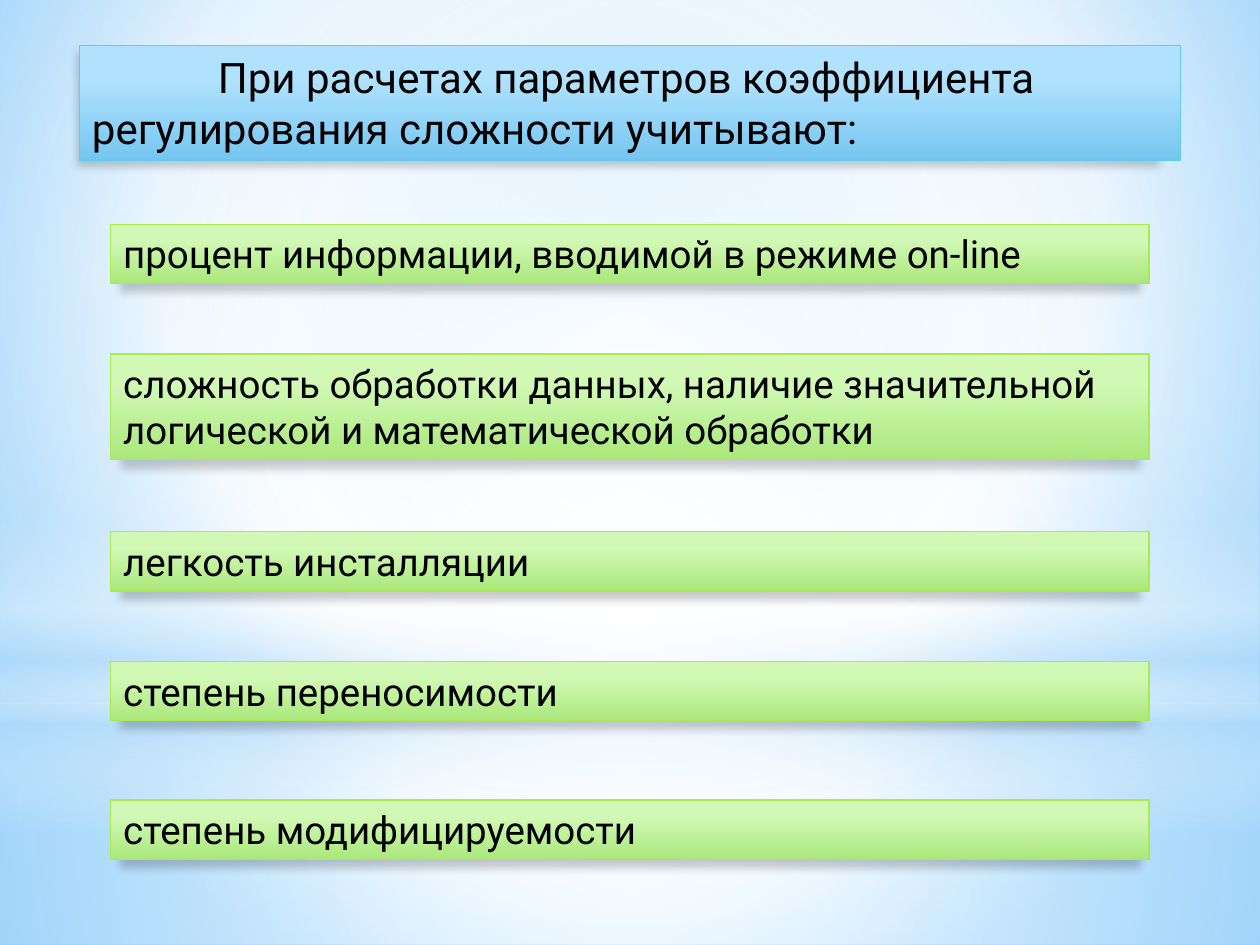
from lxml.etree import SubElement
from pptx import Presentation
from pptx.dml.color import RGBColor
from pptx.enum.shapes import MSO_SHAPE as Preset
from pptx.enum.text import MSO_ANCHOR as Anchor, MSO_AUTO_SIZE as AutoSize, PP_ALIGN as Align
from pptx.oxml.ns import qn
from pptx.util import Inches, Pt

COLORS = {
    "black": "000000", "white": "FFFFFF", "haze": "B4DCFA",
    "sky": "9ED5FF", "deep_sky": "5BB9FF",
    "blue_top": "B1E2FD", "blue_bottom": "76C6F1", "blue_edge": "5ECCF3",
    "green_top": "D1F8B5", "green_bottom": "AAE87B", "green_edge": "A7EA52",
}
CENTER = (50, 50, 50, 50)
BACKDROP = [
    (Preset.RECTANGLE, (0, 5.58, 10, 1.92),
     [(0, "white", 91), (37, "white", 76), (100, "haze", 79)], CENTER),
    (Preset.RECTANGLE, (0, 0, 10, 5.58),
     [(0, "white", 89), (48, "white", 62), (100, "haze", 79)], CENTER),
    (Preset.RECTANGLE, (0, 4.12, 10, 2.5),
     [(0, "white", 0), (29, "white", 30), (45, "haze", 40),
      (55, "white", 26), (65, "haze", 60), (100, "white", 0)], None),
    (Preset.OVAL, (0, 1.75, 10, 5.58),
     [(0, "white", 100), (56, "white", 0)], CENTER),
]
TITLE = "При расчетах параметров коэффициента регулирования сложности учитывают:"
FACTORS = [
    (1.78, 0.47, "процент информации, вводимой в режиме on-line"),
    (2.81, 0.84, "сложность обработки данных, наличие значительной "
                 "логической и математической обработки"),
    (4.22, 0.47, "легкость инсталляции"),
    (5.25, 0.47, "степень переносимости"),
    (6.35, 0.47, "степень модифицируемости"),
]


class SlideBuilder:
    """Holds the panel style and the slide being built."""

    font = "Roboto"
    frame_format = {"word_wrap": True, "auto_size": AutoSize.SHAPE_TO_FIT_TEXT,
                    "vertical_anchor": Anchor.TOP}

    def __init__(self, slide):
        self.slide = slide

    def color(self, parent, name, opacity=100):
        tint = SubElement(parent, qn("a:srgbClr"), val=COLORS[name])
        if opacity < 100:
            SubElement(tint, qn("a:alpha"), val=str(opacity * 1000))

    def gradient(self, fill, owner, stops, focus=None):
        fill.solid()
        solid = owner.find(qn("a:solidFill"))
        blend = owner.makeelement(qn("a:gradFill"), {"rotWithShape": "1"})
        owner.replace(solid, blend)
        stop_list = SubElement(blend, qn("a:gsLst"))
        for position, name, opacity in stops:
            stop = SubElement(stop_list, qn("a:gs"), pos=str(position * 1000))
            self.color(stop, name, opacity)
        if focus:
            circle = SubElement(blend, qn("a:path"), path="circle")
            edges = {side: str(inset * 1000) for side, inset in zip("ltrb", focus)}
            SubElement(circle, qn("a:fillToRect"), edges)
        else:
            SubElement(blend, qn("a:lin"), ang="5400000", scaled="0")

    def background(self, stops, focus):
        fill = self.slide.background.fill
        fill.solid()
        self.gradient(fill, self.slide.element.find(".//" + qn("p:bgPr")), stops, focus)

    def backdrop(self, preset, box, stops, focus):
        glow = self.slide.shapes.add_shape(preset, *map(Inches, box))
        self.gradient(glow.fill, glow.element.spPr, stops, focus)
        glow.line.fill.background()
        glow.shadow.inherit = False

    def shadow(self, panel):
        panel.shadow.inherit = False
        effects = panel.element.spPr.find(qn("a:effectLst"))
        drop = SubElement(effects, qn("a:outerShdw"), blurRad=str(Pt(5)), dist=str(Pt(4)),
                          dir="5400000", sx="98000", sy="98000", rotWithShape="0")
        self.color(drop, "black", 20)

    def style_panel(self, panel, text, hue, size):
        self.gradient(panel.fill, panel.element.spPr,
                      [(28, hue + "_top", 100), (100, hue + "_bottom", 100)])
        panel.line.color.rgb = RGBColor.from_string(COLORS[hue + "_edge"])
        panel.line.width = Pt(0.75)
        self.shadow(panel)
        frame = panel.text_frame
        for name, value in self.frame_format.items():
            setattr(frame, name, value)
        paragraph = frame.paragraphs[0]
        paragraph.alignment = Align.LEFT
        run = paragraph.add_run()
        run.text = text
        for name, value in {"name": self.font, "size": Pt(size)}.items():
            setattr(run.font, name, value)
        run.font.color.rgb = RGBColor.from_string(COLORS["black"])
        return paragraph

    def title(self, text, box):
        heading = self.slide.shapes.title
        for name, value in zip(("left", "top", "width", "height"), box):
            setattr(heading, name, Inches(value))
        heading.element.getparent().append(heading.element)
        paragraph = self.style_panel(heading, text, "blue", 24)
        properties = paragraph.runs[0].font and paragraph.line_spacing
        paragraph.line_spacing = properties or 1.0
        paragraph_format = paragraph._p.get_or_add_pPr()
        paragraph_format.set("marL", "0")
        paragraph_format.set("indent", str(Inches(1)))

    def factor(self, top, height, text):
        panel = self.slide.shapes.add_shape(
            Preset.RECTANGLE, Inches(0.88), Inches(top), Inches(8.24), Inches(height))
        self.style_panel(panel, text, "green", 22)


def main():
    deck = Presentation()
    deck.slide_width, deck.slide_height = Inches(10), Inches(7.5)
    builder = SlideBuilder(deck.slides.add_slide(deck.slide_layouts[5]))
    builder.background([(0, "sky", 100), (60, "white", 100), (100, "deep_sky", 100)],
                       (20, 10, 20, 60))
    for glow in BACKDROP:
        builder.backdrop(*glow)
    builder.title(TITLE, (0.63, 0.36, 8.74, 0.91))
    for factor in FACTORS:
        builder.factor(*factor)
    deck.save("out.pptx")


if __name__ == "__main__":
    main()
